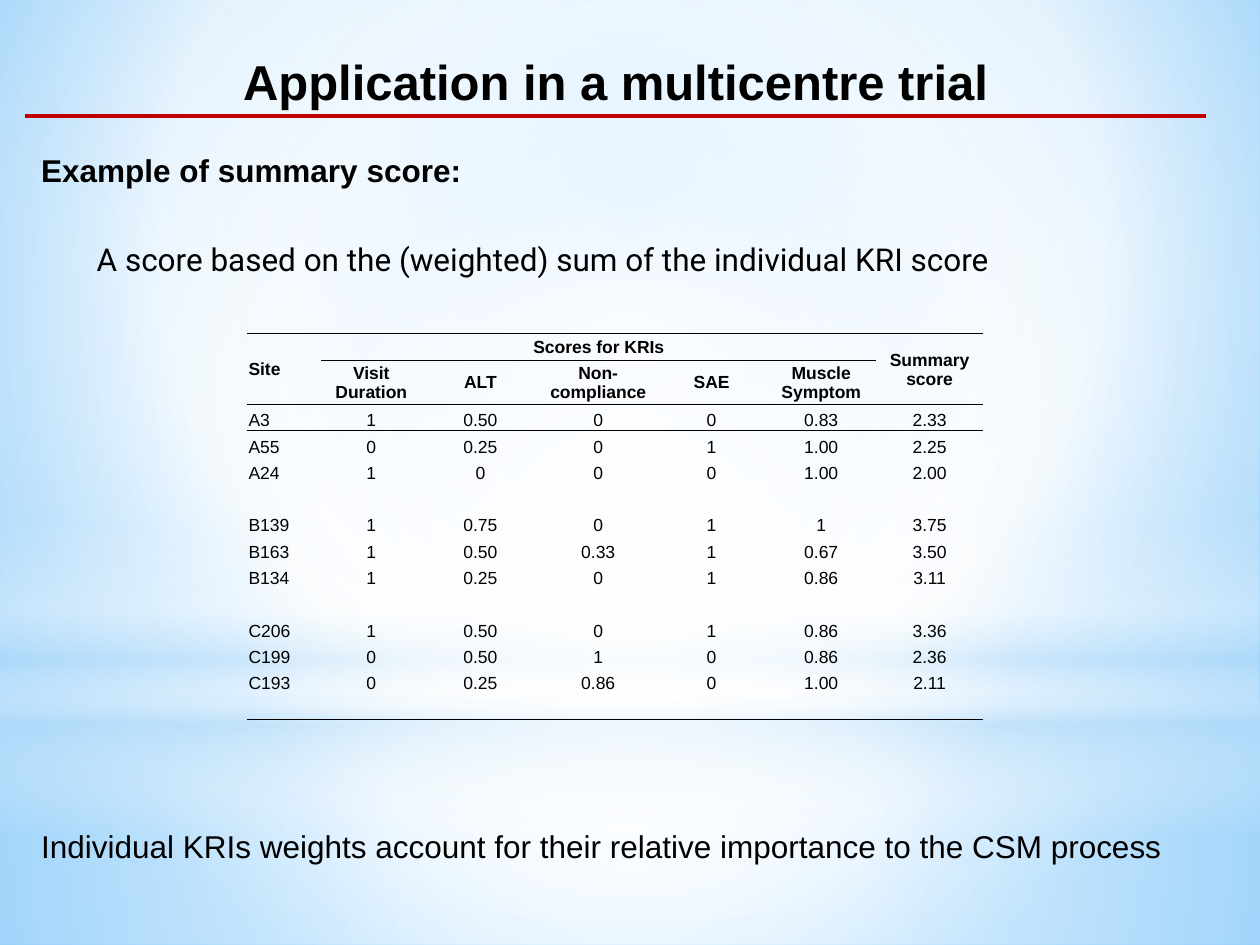
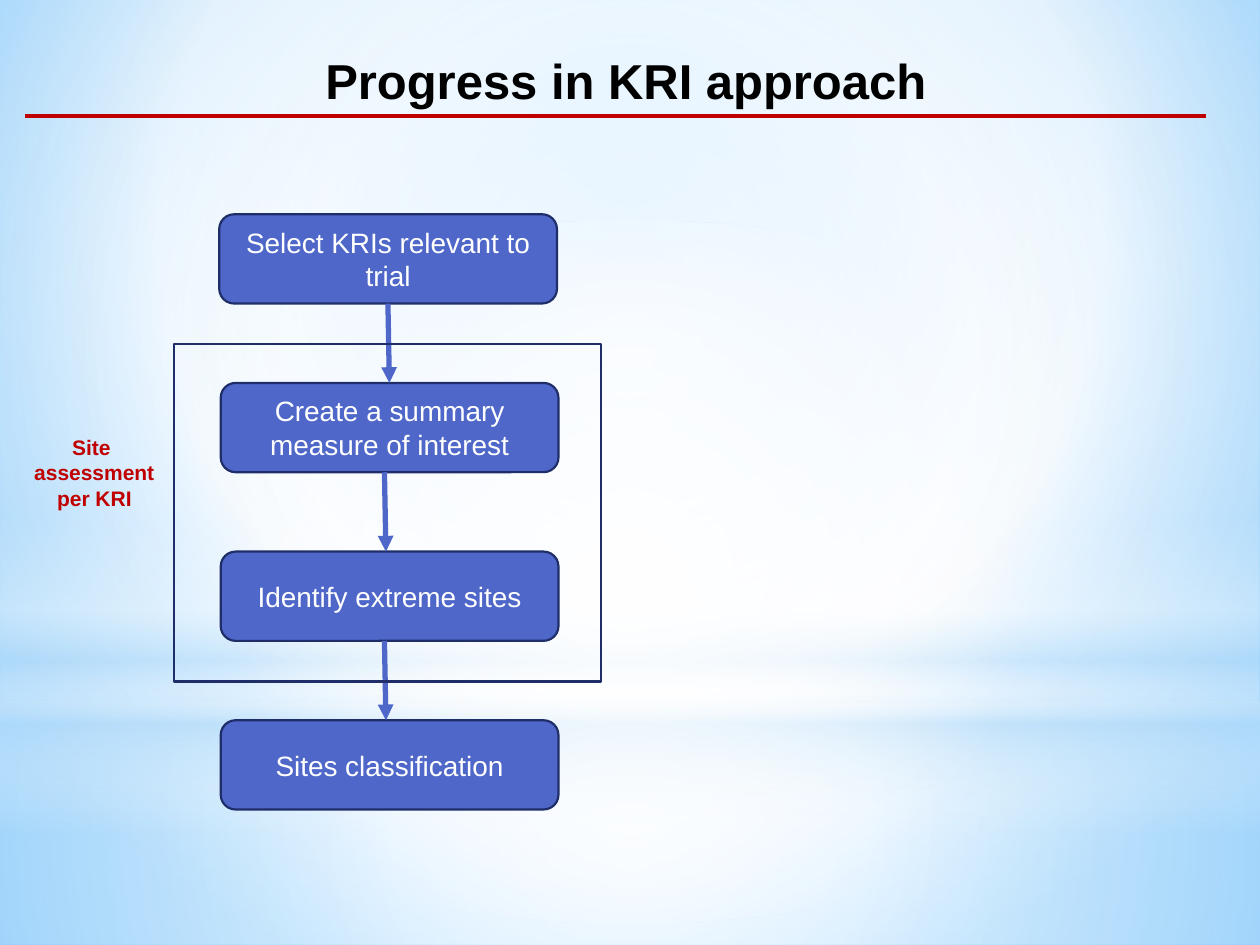
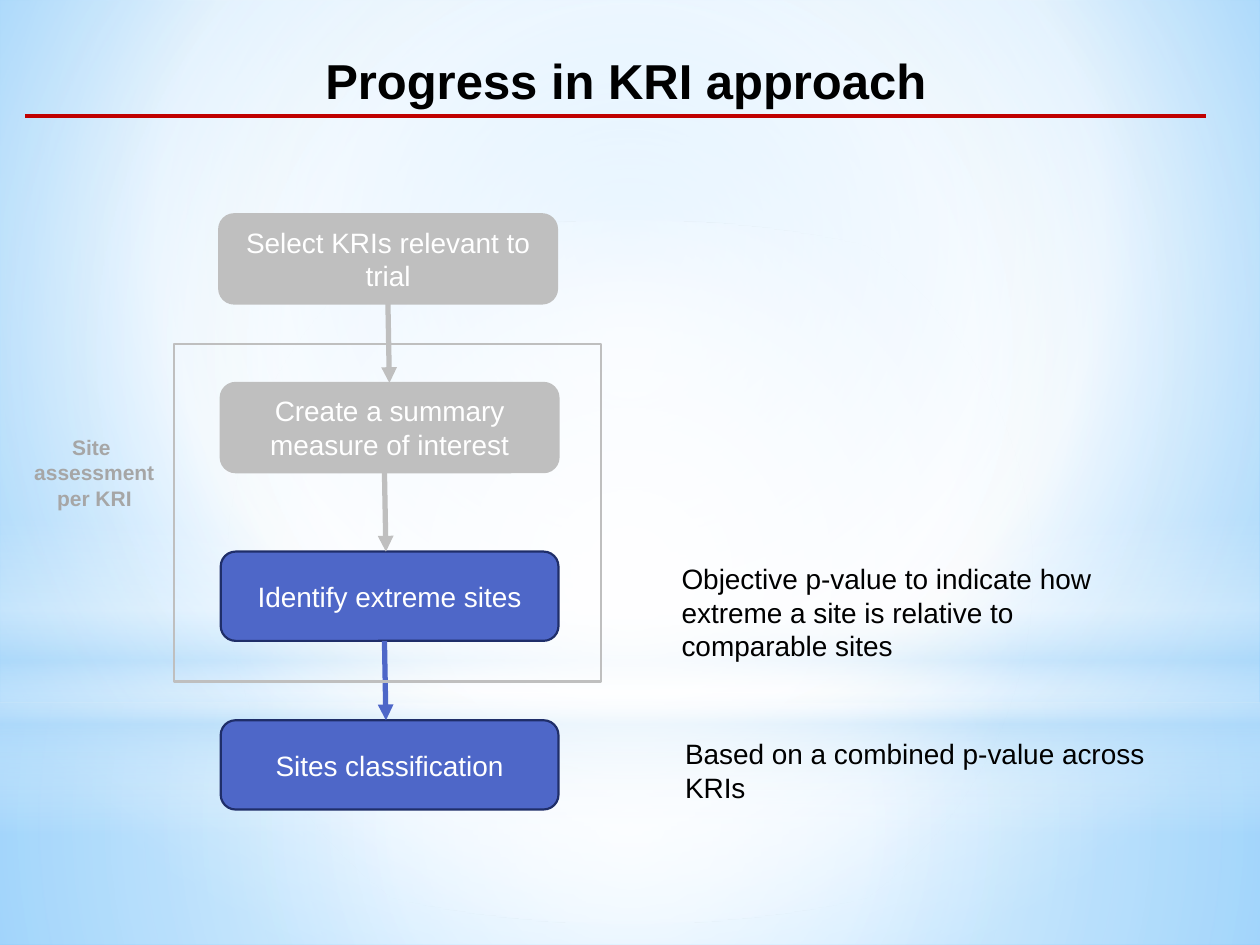
from dataclasses import dataclass
from itertools import pairwise
from typing import NamedTuple, Optional

import lxml.etree
import pptx
import pptx.dml.color
import pptx.enum.dml
import pptx.enum.shapes
import pptx.enum.text
import pptx.oxml.ns
import pptx.util

Cm = pptx.util.Cm
Pt = pptx.util.Pt
qn = pptx.oxml.ns.qn
Shape = pptx.enum.shapes.MSO_SHAPE
Align = pptx.enum.text.PP_ALIGN
Anchor = pptx.enum.text.MSO_ANCHOR

COLORS = {
    "text": "000000",
    "white": "FFFFFF",
    "rule": "C00000",
    "step": "4E67C8",
    "step_edge": "1F2E69",
    "muted": "BFBFBF",
    "muted_text": "A6A6A6",
    "sky": "9ED5FF",
    "deep_sky": "5BB9FF",
    "mist": "B4DCFA",
}
NO_TABLE_STYLE = "{2D5ABB26-0587-4C30-8999-92F81FD0307C}"


class Area(NamedTuple):
    """Position and size in centimetres."""
    left: float
    top: float
    width: float
    height: float

    def lengths(self) -> list:
        return [Cm(value) for value in self]


class Stop(NamedTuple):
    position: int
    color: str
    opacity: int = 100


@dataclass
class Gradient:
    stops: list[Stop]
    focus: Optional[tuple] = (50, 50, 50, 50)  # left, top, right, bottom; None is vertical


@dataclass
class Glow:
    area: Area
    gradient: Gradient
    kind: int = Shape.RECTANGLE


@dataclass
class Style:
    size: float = 18
    color: str = "text"
    bold: bool = False
    font: str = "Arial"
    align: Optional[int] = None


@dataclass
class Step:
    text: str
    left: float = 4.45
    arrow_x: float = 7.75  # start of the arrow that leaves this step


TITLE = Style(28, bold=True, align=Align.CENTER)
NOTE = Style(16)
STEP_TEXT = Style(16, "white", align=Align.CENTER)

SKY = Gradient([Stop(0, "sky"), Stop(60, "white"), Stop(100, "deep_sky")], (20, 10, 20, 60))
GLOWS = [
    Glow(Area(0, 14.17, 25.4, 4.88),
         Gradient([Stop(0, "white", 91), Stop(37, "white", 76), Stop(100, "mist", 79)])),
    Glow(Area(0, 0, 25.4, 14.17),
         Gradient([Stop(0, "white", 89), Stop(48, "white", 62), Stop(100, "mist", 79)])),
    Glow(Area(0, 10.46, 25.4, 6.35),
         Gradient([Stop(0, "white", 0), Stop(29, "white", 30), Stop(45, "mist", 40),
                   Stop(55, "white", 26), Stop(65, "mist", 60), Stop(100, "white", 0)], None)),
    Glow(Area(0, 4.45, 25.4, 14.17),
         Gradient([Stop(0, "white"), Stop(56, "white", 0)]), Shape.OVAL),
]

STEPS = [
    Step("Select KRIs relevant to trial", left=4.42, arrow_x=7.82),
    Step("Create a summary measure of interest"),
    Step("Identify extreme sites"),
    Step("Sites classification"),
]
STEP_TOP, STEP_PITCH, STEP_WIDTH, STEP_HEIGHT = 4.32, 3.4, 6.81, 1.8
ARROW_DRIFT = 0.03

COLUMN_WIDTHS = [1.5, 2.01, 2.39, 2.36, 2.21, 2.21, 2.16]
ROW_HEIGHT, SUBHEAD_HEIGHT = 0.53, 0.89
SCORES = [
    ["Site", "Scores for KRIs", "", "", "", "", "Summary score"],
    ["", "Visit Duration", "ALT", "Non-compliance", "SAE", "Muscle Symptom", ""],
    ["A3", "1", "0.50", "0", "0", "0.83", "2.33"],
    ["A55", "0", "0.25", "0", "1", "1.00", "2.25"],
    ["A24", "1", "0", "0", "0", "1.00", "2.00"],
    [""] * 7,
    ["B139", "1", "0.75", "0", "1", "1", "3.75"],
    ["B163", "1", "0.50", "0.33", "1", "0.67", "3.50"],
    ["B134", "1", "0.25", "0", "1", "0.86", "3.11"],
    [""] * 7,
    ["C206", "1", "0.50", "0", "1", "0.86", "3.36"],
    ["C199", "0", "0.50", "1", "0", "0.86", "2.36"],
    ["C193", "0", "0.25", "0.86", "0", "1.00", "2.11"],
    [""] * 7,
]


def rgb(name: str) -> pptx.dml.color.RGBColor:
    return pptx.dml.color.RGBColor.from_string(COLORS[name])


def add_node(parent, tag: str, **attributes):
    values = {key: str(value) for key, value in attributes.items()}
    return lxml.etree.SubElement(parent, qn(tag), values)


def set_gradient(fill, owner, gradient: Gradient) -> None:
    """Give the fill a gradient; owner is the XML element that holds it."""
    fill.gradient()
    node = owner.find(".//" + qn("a:gradFill"))
    for child in list(node):
        node.remove(child)
    stops = add_node(node, "a:gsLst")
    for stop in gradient.stops:
        mark = add_node(stops, "a:gs", pos=stop.position * 1000)
        color = add_node(mark, "a:srgbClr", val=COLORS[stop.color])
        if stop.opacity < 100:
            add_node(color, "a:alpha", val=stop.opacity * 1000)
    if gradient.focus is None:
        add_node(node, "a:lin", ang=5400000, scaled=0)
    else:
        circle = add_node(node, "a:path", path="circle")
        sides = {side: value * 1000 for side, value in zip("ltrb", gradient.focus)}
        add_node(circle, "a:fillToRect", **sides)


def add_backdrop(deck, page) -> None:
    """Put the sky and its glows on the master; page lends its shape factory."""
    master = deck.slide_master
    set_gradient(master.background.fill, master.element, SKY)
    for number, glow in enumerate(GLOWS, start=20):
        shape = page.shapes.add_shape(glow.kind, *glow.area.lengths())
        shape.shadow.inherit = False
        shape.line.fill.background()
        set_gradient(shape.fill, shape.element, glow.gradient)
        shape.element.find(".//" + qn("p:cNvPr")).set("id", str(number))
        master.shapes.element.append(shape.element)


def write(frame, text: str, style: Style) -> None:
    frame.text = text
    for para in frame.paragraphs:
        para.alignment = style.align
        for span in para.runs:
            span.font.size = Pt(style.size)
            span.font.name = style.font
            span.font.bold = style.bold
            span.font.color.rgb = rgb(style.color)


def add_text(page, area: Area, text: str, style: Style, wrap: bool = True) -> None:
    frame = page.shapes.add_textbox(*area.lengths()).text_frame
    frame.word_wrap = wrap
    frame.auto_size = pptx.enum.text.MSO_AUTO_SIZE.SHAPE_TO_FIT_TEXT
    write(frame, text, style)


def add_line(page, start: tuple, end: tuple, color: str, width: float, arrow: bool = False) -> None:
    line = page.shapes.add_connector(pptx.enum.shapes.MSO_CONNECTOR.STRAIGHT,
                                     *[Cm(value) for value in start + end])
    line.line.color.rgb = rgb(color)
    line.line.width = Pt(width)
    properties = line.element.spPr
    if arrow:
        add_node(properties.find(qn("a:ln")), "a:tailEnd", type="triangle")
    add_node(properties, "a:effectLst")


def add_box(page, kind: int, area: Area, fill: Optional[str], edge: str):
    box = page.shapes.add_shape(kind, *area.lengths())
    box.shadow.inherit = False
    if fill:
        box.fill.solid()
        box.fill.fore_color.rgb = rgb(fill)
    else:
        box.fill.background()
    box.line.color.rgb = rgb(edge)
    box.line.width = Pt(1.25)
    return box


def add_heading(page, area: Area, text: str) -> None:
    add_text(page, area, text, TITLE)
    add_line(page, (0.51, 2.34), (24.31, 2.34), "rule", 2.5)


def add_border(cell_properties, side: str) -> None:
    border = lxml.etree.Element(qn("a:ln" + side), w="6350")
    add_node(add_node(border, "a:solidFill"), "a:srgbClr", val=COLORS["text"])
    cell_properties.insert(0, border)


def border_sides(row: int, column: int) -> str:
    """Sides to rule, bottom first so that the top ends up in front."""
    if row == 0:
        return "BT" if 1 <= column <= 5 else "T"
    return {1: "BT" if 1 <= column <= 5 else "B", 2: "T", len(SCORES) - 1: "B"}.get(row, "")


def add_score_table(page) -> None:
    height = ROW_HEIGHT * (len(SCORES) - 1) + SUBHEAD_HEIGHT
    area = Area(4.98, 6.73, sum(COLUMN_WIDTHS), height)
    holder = page.shapes.add_table(len(SCORES), len(COLUMN_WIDTHS), *area.lengths())
    holder.element.find(".//" + qn("a:tableStyleId")).text = NO_TABLE_STYLE
    table = holder.table
    table.first_row = table.horz_banding = False
    for column, width in zip(table.columns, COLUMN_WIDTHS):
        column.width = Cm(width)
    for r, values in enumerate(SCORES):
        table.rows[r].height = Cm(SUBHEAD_HEIGHT if r == 1 else ROW_HEIGHT)
        for c, value in enumerate(values):
            cell = table.cell(r, c)
            cell.margin_left = cell.margin_right = cell.margin_top = Cm(0.03)
            cell.margin_bottom = 0
            cell.vertical_anchor = Anchor.MIDDLE if r < 2 else Anchor.BOTTOM
            cell.fill.background()
            if value:
                write(cell.text_frame, value,
                      Style(10, bold=r < 2, align=Align.CENTER if c else None))
            else:
                add_node(cell.text_frame.paragraphs[0]._p, "a:endParaRPr", sz=1000)
            for side in border_sides(r, c):
                add_border(cell._tc.tcPr, side)
    for first, last in [((0, 0), (1, 0)), ((0, 1), (0, 5)), ((0, 6), (1, 6))]:
        table.cell(*first).merge(table.cell(*last))


def add_flow(page, muted_steps: int = 0) -> None:
    """Draw the KRI steps; the first muted_steps are greyed, with the frame around them."""
    tops = [STEP_TOP + STEP_PITCH * i for i in range(len(STEPS))]
    fills = ["muted" if i < muted_steps else "step" for i in range(len(STEPS))]
    for step, top, fill in zip(STEPS, tops, fills):
        edge = "muted" if fill == "muted" else "step_edge"
        box = add_box(page, Shape.ROUNDED_RECTANGLE,
                      Area(step.left, top, STEP_WIDTH, STEP_HEIGHT), fill, edge)
        box.text_frame.word_wrap = True
        box.text_frame.vertical_anchor = Anchor.MIDDLE
        write(box.text_frame, step.text, STEP_TEXT)
    for step, (top, next_top), fill in zip(STEPS, pairwise(tops), fills):
        add_line(page, (step.arrow_x, top + STEP_HEIGHT),
                 (step.arrow_x + ARROW_DRIFT, next_top), fill, 3, arrow=True)
    add_box(page, Shape.RECTANGLE, Area(3.51, 6.93, 8.61, 6.81), None,
            "muted" if muted_steps else "step_edge")
    label = Style(12, "muted_text" if muted_steps else "rule", True, align=Align.CENTER)
    add_text(page, Area(0.18, 8.64, 3.33, 1.8), "Site\n assessment\n per KRI", label)


def fill_score_page(page) -> None:
    add_heading(page, Area(0.51, 0.91, 23.8, 1.45), "Application in a multicentre trial")
    add_text(page, Area(0.58, 2.92, 13.79, 1.02), "Example of summary score:", Style(bold=True))
    add_text(page, Area(1.7, 4.72, 19.2, 1.02),
             "A score based on the (weighted) sum of the individual KRI score",
             Style(font="Roboto"))
    add_text(page, Area(0.58, 16.54, 24.16, 1.02),
             "Individual KRIs weights account for their relative importance to the CSM process",
             Style(), wrap=False)
    add_score_table(page)


def fill_progress_page(page, muted_steps: int = 0) -> None:
    add_heading(page, Area(0.41, 0.89, 24.41, 1.45), "Progress in KRI approach")
    add_flow(page, muted_steps)


def main() -> None:
    deck = pptx.Presentation()
    deck.slide_width, deck.slide_height = Cm(25.4), Cm(19.05)
    score_page, progress_page, focus_page = [
        deck.slides.add_slide(deck.slide_layouts[6]) for _ in range(3)]
    add_backdrop(deck, score_page)
    fill_score_page(score_page)
    fill_progress_page(progress_page)
    fill_progress_page(focus_page, muted_steps=2)
    add_text(focus_page, Area(13.49, 11.2, 10.01, 2.31),
             "Objective p-value to indicate how extreme a site is relative to comparable sites", NOTE)
    add_text(focus_page, Area(13.56, 14.73, 10.01, 1.63),
             "Based on a combined p-value across KRIs", NOTE)
    deck.save("out.pptx")


if __name__ == "__main__":
    main()
